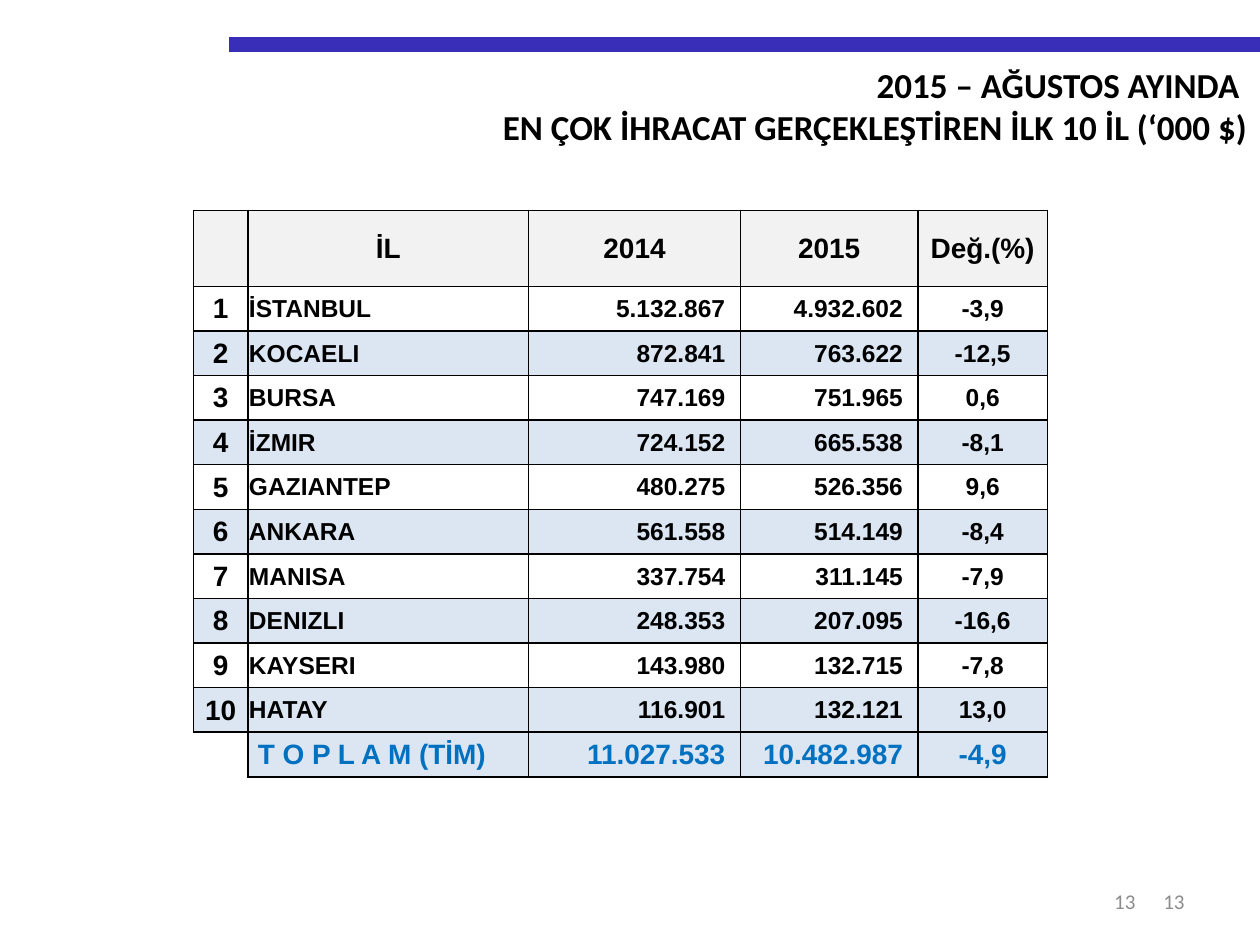
from dataclasses import dataclass

from lxml.etree import SubElement
from pptx import Presentation
from pptx.dml.color import RGBColor
from pptx.enum.shapes import MSO_CONNECTOR
from pptx.enum.text import MSO_ANCHOR, PP_ALIGN
from pptx.oxml.ns import qn
from pptx.slide import Slide
from pptx.table import _Cell
from pptx.util import Pt

BLACK = RGBColor(0x00, 0x00, 0x00)
BAR_BLUE = RGBColor(0x38, 0x2E, 0xB8)
TOTAL_BLUE = RGBColor(0x00, 0x70, 0xC0)
PAGE_GREY = RGBColor(0x8C, 0x8C, 0x8C)
HEADER_GREY = RGBColor(0xF2, 0xF2, 0xF2)
BAND_BLUE = RGBColor(0xDC, 0xE6, 0xF2)

ALL_SIDES = "LRTB"
COLUMN_WIDTHS = (31, 160.5, 121, 101.5, 74)
HEADER_HEIGHT, ROW_HEIGHT = 43.4, 25.5
HEADINGS = ("", "İL", "2014", "2015", "Değ.(%)")
PROVINCES = (
    ("İSTANBUL", "5.132.867", "4.932.602", "-3,9"),
    ("KOCAELI", "872.841", "763.622", "-12,5"),
    ("BURSA", "747.169", "751.965", "0,6"),
    ("İZMIR", "724.152", "665.538", "-8,1"),
    ("GAZIANTEP", "480.275", "526.356", "9,6"),
    ("ANKARA", "561.558", "514.149", "-8,4"),
    ("MANISA", "337.754", "311.145", "-7,9"),
    ("DENIZLI", "248.353", "207.095", "-16,6"),
    ("KAYSERI", "143.980", "132.715", "-7,8"),
    ("HATAY", "116.901", "132.121", "13,0"),
)
TOTAL = ("T O P L A M (TİM)", "11.027.533", "10.482.987", "-4,9")


@dataclass(frozen=True)
class TextStyle:
    size: float
    color: RGBColor = BLACK
    bold: bool = True
    font: str = "Arial"


@dataclass(frozen=True)
class CellLayout:
    align: PP_ALIGN
    left: float = 0.7
    right: float = 0.7


HEADER_LAYOUT = CellLayout(PP_ALIGN.CENTER, 0, 0)
NUMBER_LAYOUT = CellLayout(PP_ALIGN.RIGHT, right=8.64)
COLUMN_LAYOUTS = (
    HEADER_LAYOUT,
    CellLayout(PP_ALIGN.LEFT),
    NUMBER_LAYOUT,
    NUMBER_LAYOUT,
    CellLayout(PP_ALIGN.CENTER),
)
TOTAL_NAME_LAYOUT = CellLayout(PP_ALIGN.LEFT, left=5.76)
LARGE = TextStyle(16)
BODY = TextStyle(14)
TOTAL_STYLE = TextStyle(16, TOTAL_BLUE)
TITLE = TextStyle(20, font="Calibri")
PAGE_NUMBER = TextStyle(12, PAGE_GREY, False, "Calibri")


def write_paragraph(para, text: str, style: TextStyle, align: PP_ALIGN) -> None:
    para.text = text
    para.alignment = align
    for span in para.runs:
        span.font.name = style.font
        span.font.size = Pt(style.size)
        span.font.bold = style.bold
        span.font.color.rgb = style.color


def add_text(slide: Slide, lines: tuple[str, ...], left: float, top: float, width: float,
             height: float, style: TextStyle, anchor: MSO_ANCHOR) -> None:
    box = slide.shapes.add_textbox(Pt(left), Pt(top), Pt(width), Pt(height))
    frame = box.text_frame
    frame.word_wrap = True
    frame.vertical_anchor = anchor
    frame.text = "\n".join(lines)
    for para, line in zip(frame.paragraphs, lines):
        write_paragraph(para, line, style, PP_ALIGN.RIGHT)


def add_bar(slide: Slide) -> None:
    bar = slide.shapes.add_connector(MSO_CONNECTOR.STRAIGHT, Pt(131), Pt(25.4), Pt(720), Pt(25.4))
    bar.line.color.rgb = BAR_BLUE
    bar.line.width = Pt(8.5)
    SubElement(bar._element.spPr, qn("a:effectLst"))


def set_borders(cell: _Cell, sides: str) -> None:
    """Draw black lines on the given sides and none on the others."""
    properties = cell._tc.get_or_add_tcPr()
    for side in ALL_SIDES:
        line = SubElement(properties, qn(f"a:ln{side}"), w=str(Pt(1)))
        if side in sides:
            fill = SubElement(line, qn("a:solidFill"))
            SubElement(fill, qn("a:srgbClr"), val=str(BLACK))
        else:
            SubElement(line, qn("a:noFill"))


def fill_cell(cell: _Cell, text: str, style: TextStyle, layout: CellLayout,
              color: RGBColor | None, sides: str = ALL_SIDES) -> None:
    set_borders(cell, sides)
    if color is None:
        cell.fill.background()
    else:
        cell.fill.solid()
        cell.fill.fore_color.rgb = color
    cell.vertical_anchor = MSO_ANCHOR.MIDDLE
    cell.margin_left, cell.margin_right = Pt(layout.left), Pt(layout.right)
    cell.margin_top, cell.margin_bottom = Pt(0.5), Pt(0)
    write_paragraph(cell.text_frame.paragraphs[0], text, style, layout.align)


def add_export_table(slide: Slide) -> None:
    row_count = len(PROVINCES) + 2
    height = HEADER_HEIGHT + ROW_HEIGHT * (row_count - 1)
    table = slide.shapes.add_table(row_count, len(HEADINGS), Pt(110.6), Pt(120.2),
                                   Pt(sum(COLUMN_WIDTHS)), Pt(height)).table
    table.first_row = table.horz_banding = False
    for column, width in zip(table.columns, COLUMN_WIDTHS):
        column.width = Pt(width)
    for index, row in enumerate(table.rows):
        row.height = Pt(ROW_HEIGHT if index else HEADER_HEIGHT)

    for column, heading in enumerate(HEADINGS):
        fill_cell(table.cell(0, column), heading, LARGE, HEADER_LAYOUT, HEADER_GREY)
    for rank, province in enumerate(PROVINCES, start=1):
        band = None if rank % 2 else BAND_BLUE
        for column, text in enumerate((str(rank), *province)):
            fill_cell(table.cell(rank, column), text, BODY if column else LARGE,
                      COLUMN_LAYOUTS[column], band)

    last = row_count - 1
    fill_cell(table.cell(last, 0), "", LARGE, HEADER_LAYOUT, None, "TR")
    total_layouts = (TOTAL_NAME_LAYOUT, *COLUMN_LAYOUTS[2:])
    for column, (text, layout) in enumerate(zip(TOTAL, total_layouts), start=1):
        fill_cell(table.cell(last, column), text, TOTAL_STYLE, layout, BAND_BLUE)


def main() -> None:
    deck = Presentation()
    deck.slide_width, deck.slide_height = Pt(720), Pt(540)
    slide = deck.slides.add_slide(deck.slide_layouts[6])
    add_bar(slide)
    for left, width in ((516.2, 167.8), (504.7, 151.2)):
        add_text(slide, ("13",), left, 500.4, width, 28.8, PAGE_NUMBER, MSO_ANCHOR.MIDDLE)
    add_text(slide, ("2015 – AĞUSTOS AYINDA ", "EN ÇOK İHRACAT GERÇEKLEŞTİREN İLK 10 İL (‘000 $)"),
             76.3, 32.6, 643.7, 55.7, TITLE, MSO_ANCHOR.TOP)
    add_export_table(slide)
    deck.save("out.pptx")


if __name__ == "__main__":
    main()
